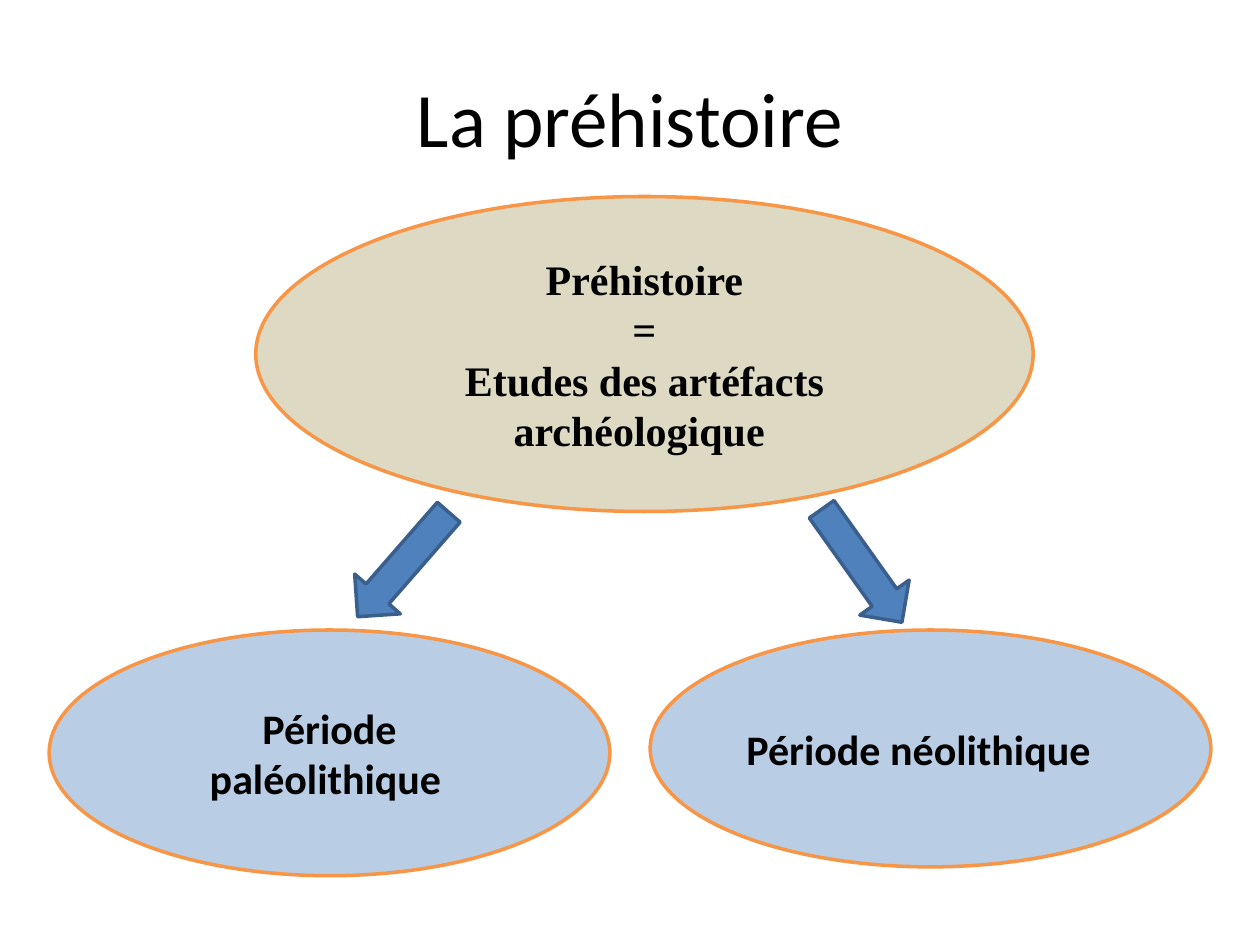
from pptx import Presentation
from pptx.dml.color import RGBColor
from pptx.enum.shapes import MSO_SHAPE
from pptx.enum.text import MSO_ANCHOR, PP_ALIGN
from pptx.util import Inches, Pt

WIDTH, HEIGHT = 10, 7.5
BLACK, SAND, SKY = "000000", "DDD9C3", "B9CDE5"
ORANGE, BLUE, NAVY = "F79646", "4F81BD", "3A5F8C"


def color(value):
    return RGBColor.from_string(value)


def box_lengths(box):
    """Turn shares of the slide's size into lengths."""
    left, top, width, height = box
    return [Inches(WIDTH * left), Inches(HEIGHT * top),
            Inches(WIDTH * width), Inches(HEIGHT * height)]


def write_paragraph(paragraph, runs):
    """Write runs given as (text, format values)."""
    paragraph.alignment = PP_ALIGN.CENTER
    for text, values in runs:
        run = paragraph.add_run()
        run.text = text
        run.font.color.rgb = color(BLACK)
        for name, value in values.items():
            setattr(run.font, name, value)


def font_values(name, size, bold=False):
    return {"name": name, "size": Pt(size), "bold": bold}


def add_title(slide, box, text):
    title = slide.shapes.title
    for name, value in zip(("left", "top", "width", "height"), box_lengths(box)):
        setattr(title, name, value)
    title.text_frame.vertical_anchor = MSO_ANCHOR.MIDDLE
    write_paragraph(title.text_frame.paragraphs[0], [(text, font_values("Calibri", 44))])


def add_outlined_shape(slide, kind, box, fill, line):
    shape = slide.shapes.add_shape(kind, *box_lengths(box))
    shape.shadow.inherit = False
    shape.fill.solid()
    shape.fill.fore_color.rgb = color(fill)
    shape.line.color.rgb = color(line)
    shape.line.width = Pt(2)
    return shape


def add_ellipse(slide, box, fill, paragraphs):
    frame = add_outlined_shape(slide, MSO_SHAPE.OVAL, box, fill, ORANGE).text_frame
    frame.word_wrap = True
    frame.vertical_anchor = MSO_ANCHOR.MIDDLE
    for index, runs in enumerate(paragraphs):
        paragraph = frame.add_paragraph() if index else frame.paragraphs[0]
        write_paragraph(paragraph, runs)


def add_arrow(slide, box, rotation):
    arrow = add_outlined_shape(slide, MSO_SHAPE.LEFT_ARROW, box, BLUE, NAVY)
    arrow.rotation = rotation


def main():
    presentation = Presentation()
    presentation.slide_width = Inches(WIDTH)
    presentation.slide_height = Inches(HEIGHT)
    slide = presentation.slides.add_slide(presentation.slide_layouts[5])

    add_title(slide, (0.05, 0.04, 0.9, 1.25 / HEIGHT), "La préhistoire")

    # Definition
    serif = font_values("Times New Roman", 24, True)
    definition = ("Préhistoire", "=", "Etudes des artéfacts archéologique ")
    add_ellipse(slide, (0.203, 1.56 / HEIGHT, 0.617, 2.5 / HEIGHT), SAND,
                [[(text, serif)] for text in definition])

    # Periods: text, trailing spaces, their weight, left and height
    periods = (("Période paléolithique", "\N{NO-BREAK SPACE}", False, 0.039, 1.95),
               ("Période néolithique", "\N{NO-BREAK SPACE} \N{NO-BREAK SPACE}", True, 0.516, 1.88))
    for text, ending, bold, left, height in periods:
        add_ellipse(slide, (left, 5 / HEIGHT, 0.445, height / HEIGHT), SKY,
                    [[(text, font_values("Calibri", 24, True)),
                      (ending, font_values("Calibri", 20, bold))]])

    # Arrows from the definition to the periods
    for left, top, rotation in ((0.265, 4.24, 311.1), (0.629, 4.25, 234.6)):
        add_arrow(slide, (left, top / HEIGHT, 0.11, 0.48 / HEIGHT), rotation)

    presentation.save("out.pptx")


if __name__ == "__main__":
    main()
